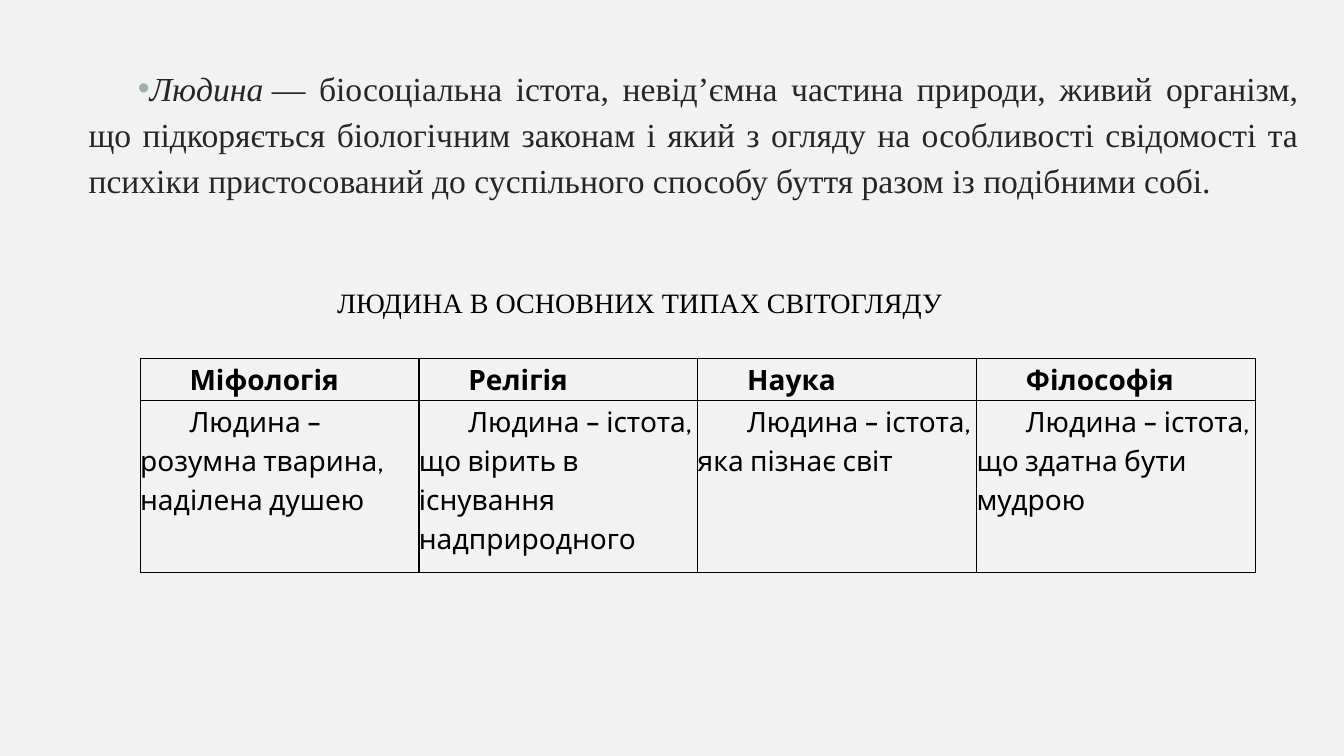
from dataclasses import dataclass

from lxml.etree import SubElement
from pptx import Presentation
from pptx.dml.color import RGBColor
from pptx.enum.text import PP_ALIGN as Align
from pptx.oxml.ns import qn
from pptx.slide import Slide
from pptx.table import _Cell as Cell
from pptx.text.text import TextFrame, _Paragraph as Paragraph
from pptx.util import Inches, Pt


@dataclass(frozen=True)
class Theme:
    background: str = "F2F2F2"
    body: str = "262626"
    ink: str = "000000"
    bullet: str = "9BAFB5"
    serif: str = "Times New Roman"
    sans: str = "Cabin"
    body_size: int = 24
    table_size: int = 20
    border_width: float = 1


@dataclass(frozen=True)
class TextStyle:
    font: str
    size: int
    color: str
    align: Align = Align.LEFT
    margin: float = 0
    space_before: int = 6
    space_after: int = 6


@dataclass(frozen=True)
class Box:
    left: float
    top: float
    width: float
    height: float

    def lengths(self) -> list[int]:
        return [Inches(value) for value in (self.left, self.top, self.width, self.height)]


@dataclass(frozen=True)
class Worldview:
    name: str
    definition: str


THEME = Theme()
FIRST_LINE_INDENT = 0.49
BODY_STYLE = TextStyle(THEME.serif, THEME.body_size, THEME.body, Align.JUSTIFY, 0.25, 10, 8)
TITLE_STYLE = TextStyle(THEME.serif, THEME.table_size, THEME.ink, Align.CENTER)
CELL_STYLE = TextStyle(THEME.sans, THEME.table_size, THEME.ink)

DEFINITION_BOX = Box(0.53, 0.56, 12.45, 5.72)
TITLE_BOX = Box(2.15, 2.73, 7.9, 0.46)
TABLE_BOX = Box(1.39, 3.56, 11.06, 2.12)
ROW_HEIGHTS = (0.41, 1.71)

TERM = "Людина\u00a0"
DEFINITION = (
    "— біосоціальна істота, невід’ємна частина природи, живий організм, "
    "що підкоряється біологічним законам і який з огляду на особливості свідомості "
    "та психіки пристосований до суспільного способу буття разом із подібними собі. "
)
TABLE_TITLE = "ЛЮДИНА В ОСНОВНИХ ТИПАХ СВІТОГЛЯДУ"
WORLDVIEWS = (
    Worldview("Міфологія", "Людина – розумна тварина, наділена душею"),
    Worldview("Релігія", "Людина – істота, що вірить в існування надприродного"),
    Worldview("Наука", "Людина – істота, яка пізнає світ"),
    Worldview("Філософія", "Людина – істота, що здатна бути мудрою"),
)


def format_paragraph(paragraph: Paragraph, style: TextStyle) -> None:
    formats = {
        "alignment": style.align,
        "line_spacing": 1.15,
        "space_before": Pt(style.space_before),
        "space_after": Pt(style.space_after),
    }
    for name, value in formats.items():
        setattr(paragraph, name, value)
    properties = paragraph._p.get_or_add_pPr()
    properties.set("marL", str(Inches(style.margin)))
    properties.set("indent", str(Inches(FIRST_LINE_INDENT)))


def add_run(paragraph: Paragraph, text: str, style: TextStyle,
            bold: bool = False, italic: bool = False) -> None:
    run = paragraph.add_run()
    run.text = text
    formats = {"name": style.font, "size": Pt(style.size), "bold": bold, "italic": italic}
    for name, value in formats.items():
        setattr(run.font, name, value)
    run.font.color.rgb = RGBColor.from_string(style.color)


def add_bullet(paragraph: Paragraph) -> None:
    properties = paragraph._p.get_or_add_pPr()
    color = SubElement(properties, qn("a:buClr"))
    SubElement(color, qn("a:srgbClr"), val=THEME.bullet)
    SubElement(properties, qn("a:buFont"), typeface="Arial")
    SubElement(properties, qn("a:buChar"), char="•")


def add_text_frame(slide: Slide, box: Box) -> TextFrame:
    frame = slide.shapes.add_textbox(*box.lengths()).text_frame
    frame.word_wrap = True
    return frame


def add_definition(slide: Slide) -> None:
    paragraph = add_text_frame(slide, DEFINITION_BOX).paragraphs[0]
    format_paragraph(paragraph, BODY_STYLE)
    add_bullet(paragraph)
    add_run(paragraph, TERM, BODY_STYLE, italic=True)
    add_run(paragraph, DEFINITION, BODY_STYLE)


def add_table_title(slide: Slide) -> None:
    paragraph = add_text_frame(slide, TITLE_BOX).paragraphs[0]
    format_paragraph(paragraph, TITLE_STYLE)
    add_run(paragraph, TABLE_TITLE, TITLE_STYLE)


def add_borders(cell: Cell) -> None:
    properties = cell._tc.get_or_add_tcPr()
    for position, side in enumerate(("lnL", "lnR", "lnT", "lnB")):
        line = SubElement(properties, qn(f"a:{side}"), w=str(Pt(THEME.border_width)))
        fill = SubElement(line, qn("a:solidFill"))
        SubElement(fill, qn("a:srgbClr"), val=THEME.ink)
        properties.insert(position, line)  # borders must precede the cell fill


def fill_cell(cell: Cell, text: str, bold: bool) -> None:
    for side in ("left", "right", "top", "bottom"):
        setattr(cell, f"margin_{side}", 0)
    cell.fill.background()
    add_borders(cell)
    paragraph = cell.text_frame.paragraphs[0]
    format_paragraph(paragraph, CELL_STYLE)
    add_run(paragraph, text, CELL_STYLE, bold=bold)


def add_worldview_table(slide: Slide) -> None:
    table = slide.shapes.add_table(
        len(ROW_HEIGHTS), len(WORLDVIEWS), *TABLE_BOX.lengths()
    ).table
    table.first_row = table.horz_banding = False
    for row, height in zip(table.rows, ROW_HEIGHTS):
        row.height = Inches(height)
    for column, worldview in enumerate(WORLDVIEWS):
        fill_cell(table.cell(0, column), worldview.name, bold=True)
        fill_cell(table.cell(1, column), worldview.definition, bold=False)


def main() -> None:
    presentation = Presentation()
    presentation.slide_width = Inches(13.33)
    presentation.slide_height = Inches(7.5)
    slide = presentation.slides.add_slide(presentation.slide_layouts[6])
    background = slide.background.fill
    background.solid()
    background.fore_color.rgb = RGBColor.from_string(THEME.background)
    add_definition(slide)
    add_table_title(slide)
    add_worldview_table(slide)
    presentation.save("out.pptx")


if __name__ == "__main__":
    main()
